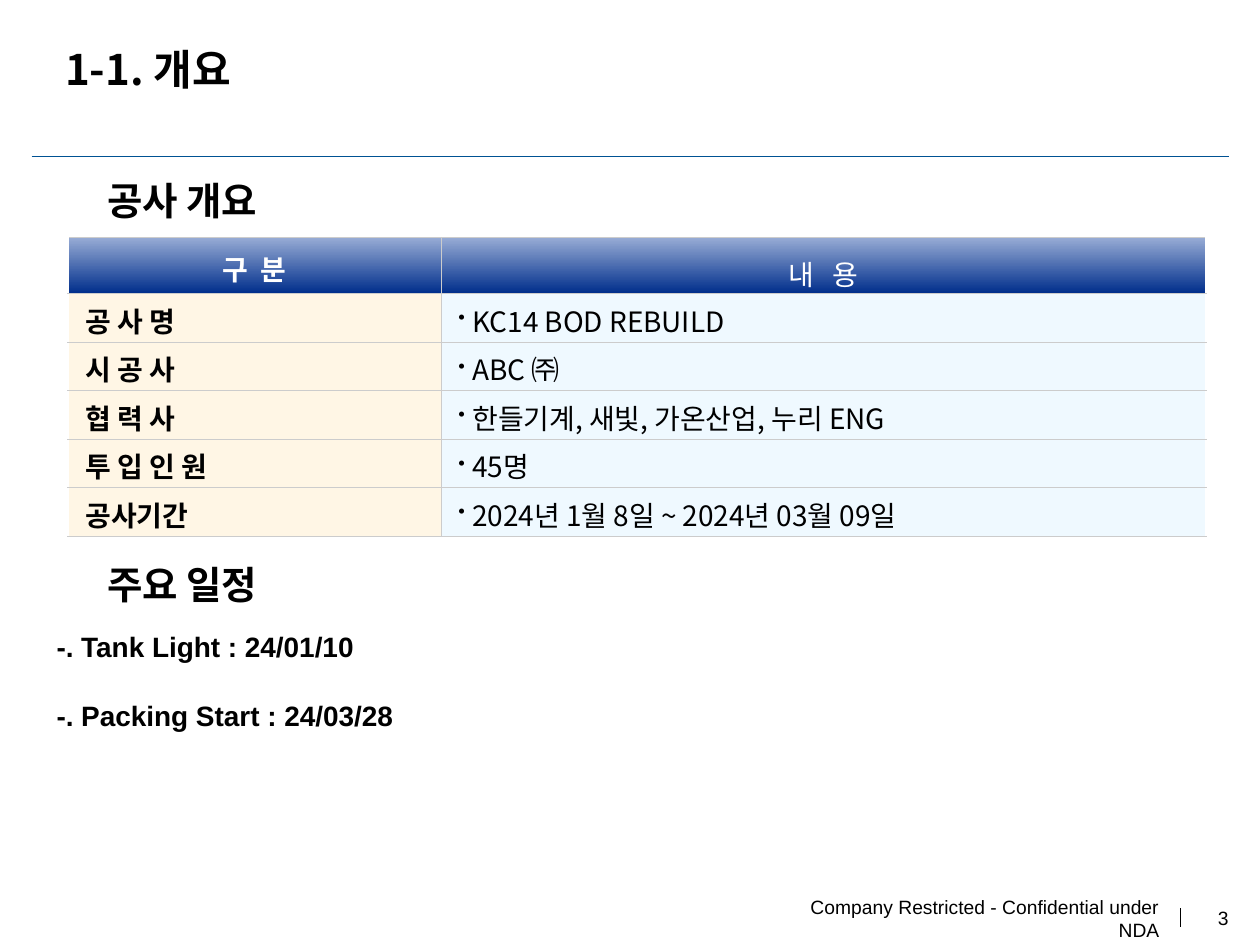
from lxml.etree import SubElement
from pptx import Presentation
from pptx.dml.color import RGBColor as RGB
from pptx.enum.shapes import MSO_CONNECTOR as LINE
from pptx.enum.text import MSO_ANCHOR as ANCHOR, PP_ALIGN as ALIGN
from pptx.oxml import parse_xml
from pptx.oxml.ns import nsdecls, qn
from pptx.util import Pt

BLACK = RGB(0, 0, 0)
WHITE = RGB(255, 255, 255)
BLUE = RGB(0x00, 0x52, 0x93)
NAVY = RGB(0x00, 0x2E, 0x8B)
PALE = RGB(0x99, 0xAD, 0xD6)
CREAM = RGB(0xFF, 0xF6, 0xE5)
ICE = RGB(0xEF, 0xF9, 0xFF)
GREY = RGB(0xCC, 0xCC, 0xCC)
SANS = "Arial"
KOREAN = "Noto Sans CJK KR"


def style(para, size, face=KOREAN, bold=False, color=BLACK):
    """Set the font of a paragraph, East Asian face included."""
    font = para.font
    font.size, font.bold, font.name = Pt(size), bold, face
    font.color.rgb = color
    if face == KOREAN:
        SubElement(font._element, qn("a:ea")).set("typeface", face)


def add_text(box, lines, size, face, bold, align=ALIGN.LEFT, pad=(0, 0), gap=0):
    """Place lines in a box (left, top, width, height); pad is (side, end)."""
    frame = slide.shapes.add_textbox(*map(Pt, box)).text_frame
    frame.word_wrap = True
    frame.vertical_anchor = ANCHOR.MIDDLE
    frame.margin_left = frame.margin_right = Pt(pad[0])
    frame.margin_top = frame.margin_bottom = Pt(pad[1])
    for i, line in enumerate(lines):
        para = frame.add_paragraph() if i else frame.paragraphs[0]
        para.text, para.alignment = line, align
        if i:
            para.space_before = Pt(gap)
        style(para, size, face, bold)


deck = Presentation()
deck.slide_width, deck.slide_height = Pt(720), Pt(540)
slide = deck.slides.add_slide(deck.slide_layouts[6])

# Rules of the page frame
for ends, color, width in [
    ((18, 89.3, 702, 89.3), BLUE, 0.75),
    ((674.6, 519, 674.6, 530), BLACK, 1),
]:
    rule = slide.shapes.add_connector(LINE.STRAIGHT, *map(Pt, ends))
    rule.line.color.rgb = color
    rule.line.width = Pt(width)
    SubElement(rule._element.spPr, qn("a:effectLst"))

# Footer, title, headings and dates
add_text((665.3, 514, 36.7, 21), ["3"], 11, SANS, False, ALIGN.RIGHT)
add_text((437, 514, 225.5, 21), ["Company Restricted - Confidential under NDA"],
         11, SANS, False, ALIGN.RIGHT)
add_text((30.2, 20.9, 181.4, 36.7), ["1-1. 개요"], 24, KOREAN, True, pad=(7.2, 3.6))
for top, head in [(100.8, "공사 개요"), (320.4, "주요 일정")]:
    add_text((61.2, top, 165.6, 26.6), [head], 22, KOREAN, True)
add_text((25.2, 356.4, 602, 65.5),
         ["-. Tank Light : 24/01/10", "-. Packing Start : 24/03/28"],
         16, SANS, True, pad=(7.2, 3.6), gap=20)

# Overview table
rows = [
    ("구  분", "내   용"),
    ("공 사 명", "KC14 BOD REBUILD"),
    ("시 공 사", "ABC ㈜"),
    ("협 력 사", "한들기계, 새빛, 가온산업, 누리 ENG"),
    ("투 입 인 원", "45명"),
    ("공사기간", "2024년 1월 8일 ~ 2024년 03월 09일"),
]
table = slide.shapes.add_table(
    len(rows), 2, Pt(38.9), Pt(135.4), Pt(650.2), Pt(170.8)).table
for col, width in zip(table.columns, (213.1, 437.1)):
    col.width = Pt(width)
for r, row in enumerate(rows):
    table.rows[r].height = Pt(27.7 if r else 32.3)
    for c, text in enumerate(row):
        cell = table.cell(r, c)
        cell.vertical_anchor = ANCHOR.MIDDLE
        cell.margin_left = cell.margin_right = Pt(10)
        cell.margin_top, cell.margin_bottom = Pt(3), Pt(0)
        para = cell.text_frame.paragraphs[0]
        para.text = text
        if r == 0:
            para.alignment = ALIGN.CENTER
            cell.fill.gradient()
            cell.fill.gradient_angle = 270
            for stop, color in zip(cell.fill.gradient_stops, (PALE, NAVY)):
                stop.color.rgb = color
            if c:
                para.line_spacing = 1.25
        else:
            cell.fill.solid()
            cell.fill.fore_color.rgb = ICE if c else CREAM
            if c:
                props = para._p.get_or_add_pPr()
                props.set("marL", str(Pt(8)))
                props.set("indent", str(-Pt(8)))
                SubElement(props, qn("a:buSzPct")).set("val", "70000")
                SubElement(props, qn("a:buChar")).set("char", "•")
        style(para, 16, bold=c == 0, color=BLACK if r else WHITE)
        sides = ("lnL", "lnT", "lnB") if c else ("lnR", "lnT", "lnB")
        for i, side in enumerate(sides):
            cell._tc.get_or_add_tcPr().insert(i, parse_xml(
                f'<a:{side} {nsdecls("a")} w="{Pt(0.25)}"><a:solidFill>'
                f'<a:srgbClr val="{GREY}"/></a:solidFill></a:{side}>'))

deck.save("out.pptx")
